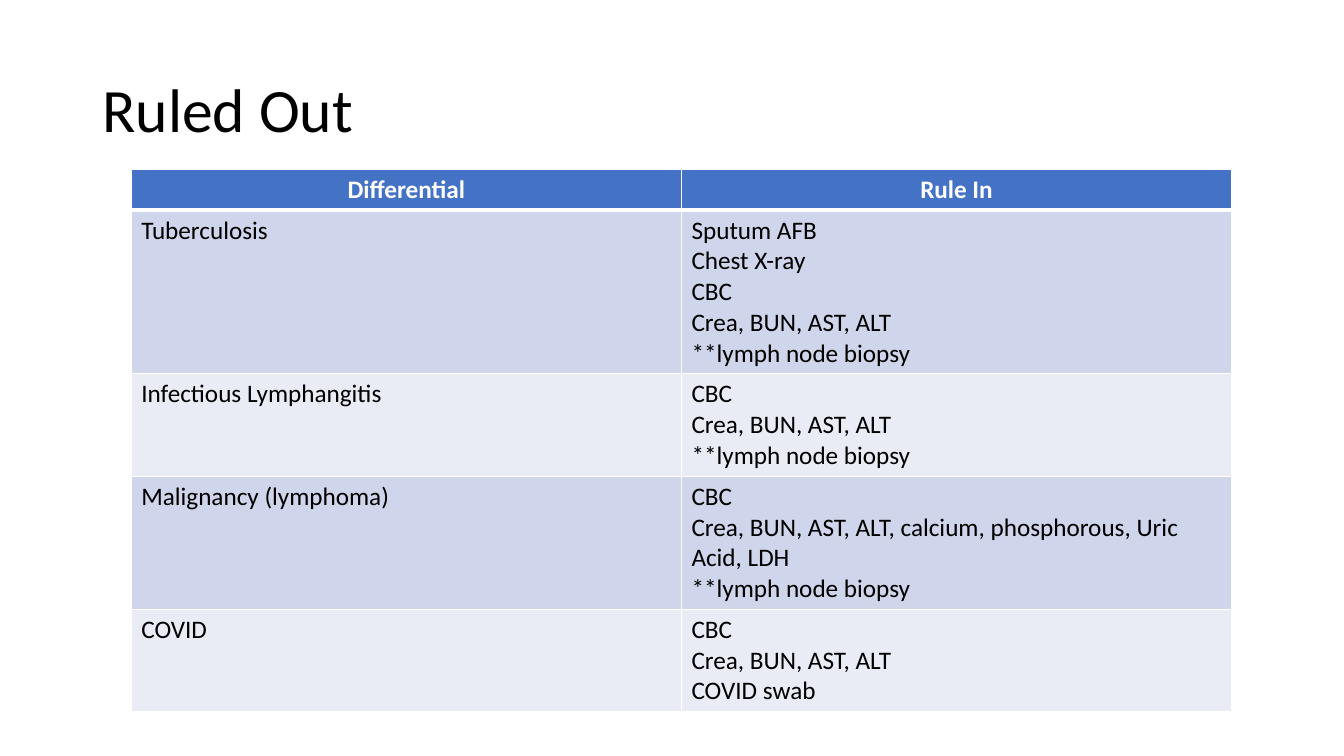
from lxml import etree
from pptx import Presentation
from pptx import util as u
from pptx.dml.color import RGBColor
from pptx.enum import text
from pptx.oxml.ns import qn

PX = 9525
COLOURS = {
    "ink": "000000",
    "paper": "FFFFFF",
    "header": "4472C4",
    "band_dark": "CFD5EA",
    "band_light": "E9EBF5",
}
HEADINGS = ["Differential", "Rule In"]
DIFFERENTIALS = {
    "Tuberculosis": [
        "Sputum AFB",
        "Chest X-ray",
        "CBC",
        "Crea, BUN, AST, ALT",
        "**lymph node biopsy",
    ],
    "Infectious Lymphangitis": ["CBC", "Crea, BUN, AST, ALT", "**lymph node biopsy"],
    "Malignancy (lymphoma)": [
        "CBC",
        "Crea, BUN, AST, ALT, calcium, phosphorous, Uric Acid, LDH",
        "**lymph node biopsy",
    ],
    "COVID": ["CBC", "Crea, BUN, AST, ALT", "COVID swab"],
}


class SlideBuilder:
    font_name = "Calibri"

    def __init__(self, slide):
        self.slide = slide

    def format_text(self, frame, colour, font_format, paragraph_format):
        for paragraph in frame.paragraphs:
            for name, value in paragraph_format.items():
                setattr(paragraph, name, value)
            for run in paragraph.runs:
                run.font.color.rgb = RGBColor.from_string(COLOURS[colour])
                for name, value in {"name": self.font_name, **font_format}.items():
                    setattr(run.font, name, value)

    def title(self, wording, left, top, width, height):
        shape = self.slide.shapes.title
        box = {"left": left, "top": top, "width": width, "height": height}
        for name, value in box.items():
            setattr(shape, name, value * PX)
        frame = shape.text_frame
        frame.text = wording
        frame.auto_size = text.MSO_AUTO_SIZE.NONE
        frame.vertical_anchor = text.MSO_ANCHOR.MIDDLE
        self.format_text(
            frame,
            "ink",
            {"size": u.Pt(44)},
            {"alignment": text.PP_ALIGN.LEFT, "line_spacing": 0.9},
        )

    def borders(self, cell, row):
        """Draw thin cell edges, with a thick line between header and body."""
        widths = {"L": 1, "R": 1, "T": 3 if row == 1 else 1, "B": 3 if row == 0 else 1}
        properties = cell._tc.get_or_add_tcPr()
        for side, width in widths.items():
            line = etree.SubElement(properties, qn(f"a:ln{side}"), w=str(u.Pt(width)))
            fill = etree.SubElement(line, qn("a:solidFill"))
            etree.SubElement(fill, qn("a:srgbClr"), val=COLOURS["paper"])

    def cell(self, cell, row, wording):
        is_header = row == 0
        cell.text = wording
        self.borders(cell, row)
        band = "band_dark" if row % 2 else "band_light"
        cell.fill.solid()
        cell.fill.fore_color.rgb = RGBColor.from_string(
            COLOURS["header" if is_header else band]
        )
        align = text.PP_ALIGN.CENTER if is_header else text.PP_ALIGN.LEFT
        self.format_text(
            cell.text_frame,
            "paper" if is_header else "ink",
            {"size": u.Pt(18), "bold": is_header},
            {"alignment": align},
        )

    def table(self, rows, left, top, column_width, row_height):
        columns = len(rows[0])
        table = self.slide.shapes.add_table(
            len(rows),
            columns,
            left * PX,
            top * PX,
            columns * column_width * PX,
            len(rows) * row_height * PX,
        ).table
        for row, wordings in enumerate(rows):
            for column, wording in enumerate(wordings):
                self.cell(table.cell(row, column), row, wording)


def main():
    presentation = Presentation()
    presentation.slide_width = 1280 * PX
    presentation.slide_height = 720 * PX
    slide = presentation.slides.add_slide(presentation.slide_layouts[5])
    builder = SlideBuilder(slide)
    builder.title("Ruled Out", left=88, top=38, width=1104, height=139)
    rows = [HEADINGS]
    rows += [[name, "\n".join(tests)] for name, tests in DIFFERENTIALS.items()]
    builder.table(rows, left=125, top=161, column_width=524, row_height=39)
    presentation.save("out.pptx")


if __name__ == "__main__":
    main()
